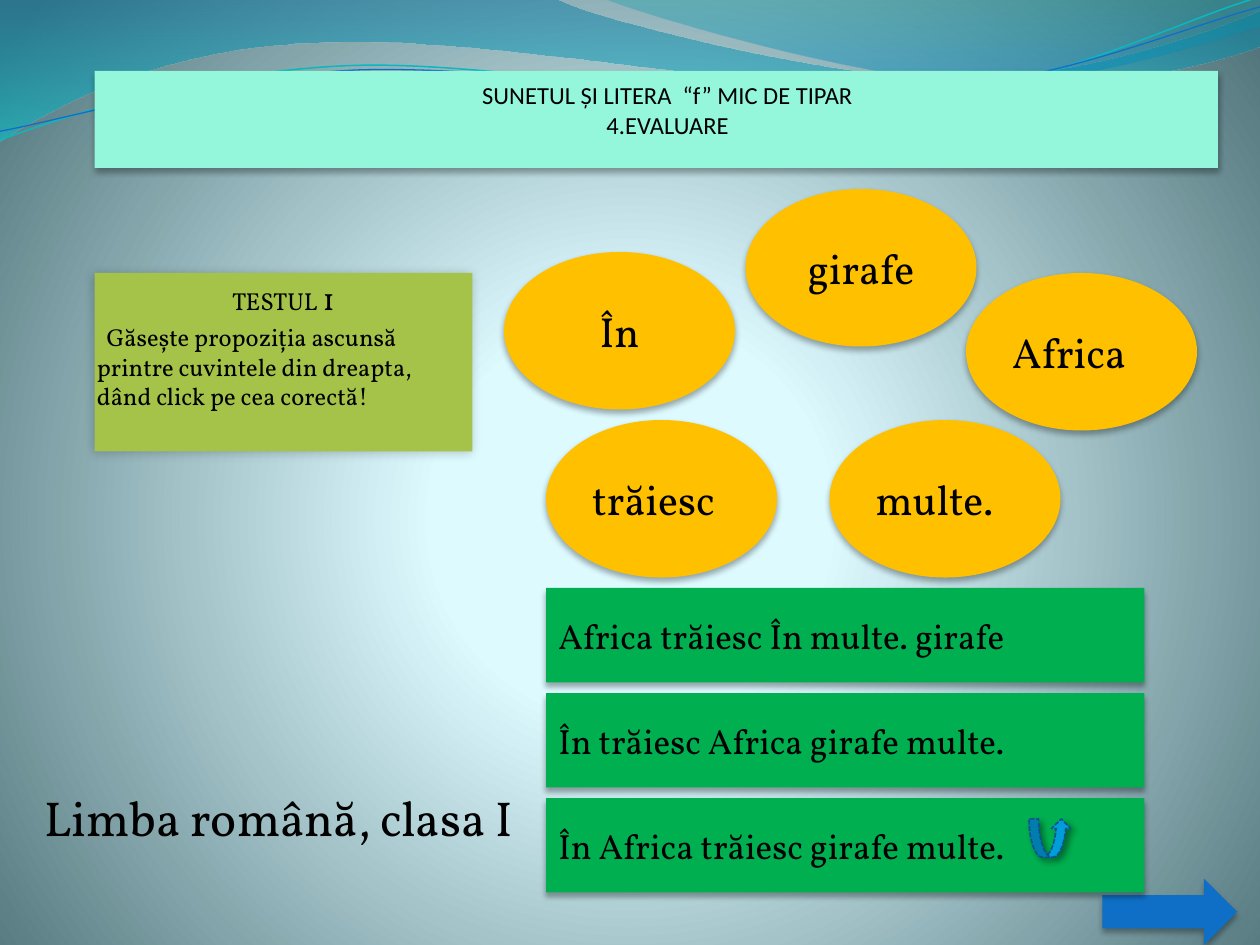
import math
import pptx
import pptx.util
import pptx.dml.color
import pptx.enum.dml
import pptx.enum.lang
import pptx.enum.shapes
import pptx.enum.text
import pptx.oxml
import pptx.oxml.ns

Pt = pptx.util.Pt
RGB = pptx.dml.color.RGBColor.from_string
Kind = pptx.enum.shapes.MSO_SHAPE
Align = pptx.enum.text.PP_ALIGN
Anchor = pptx.enum.text.MSO_ANCHOR
qn = pptx.oxml.ns.qn
ns = pptx.oxml.ns.nsdecls("a")
hues = {
    "ink": "000000", "mint": "94F7DC", "olive": "A5C249", "gold": "FFC000",
    "green": "00B050", "blue": "0F6FC6", "sky": "009DD9", "navy": "0B5292",
    "cyan": "0AB8BF", "glow": "DEFBFF", "mist": "DDFAFF", "slate": "52767C",
    "deep": "0074A1", "aqua": "00C6CF", "teal": "00A1A9", "sea": "008BBF",
}


def form(shape, box, hue, cast=(32, 3.5, 2.2, 90)):
    shape.left, shape.top, shape.width, shape.height = [Pt(v) for v in box]
    shape.fill.solid()
    shape.fill.fore_color.rgb = RGB(hues[hue])
    shape.line.fill.background()
    shape.shadow.inherit = False
    alpha, blur, dist, angle = cast
    shape._element.spPr.find(qn("a:effectLst")).append(pptx.oxml.parse_xml(
        f'<a:outerShdw {ns} blurRad="{Pt(blur)}" dist="{Pt(dist)}" dir="{angle * 60000}" '
        f'algn="ctr" rotWithShape="0"><a:srgbClr val="{hues["ink"]}">'
        f'<a:alpha val="{alpha * 1000}"/></a:srgbClr></a:outerShdw>'))
    return shape


def write(para, text, size, face="Vollkorn"):
    run = para.add_run()
    run.text = text
    run.font.size = Pt(size)
    run.font.name = face
    run.font.bold = False
    run.font.color.rgb = RGB(hues["ink"])
    run.font.language_id = pptx.enum.lang.MSO_LANGUAGE_ID.ROMANIAN


deck = pptx.Presentation()
deck.slide_width, deck.slide_height = Pt(720), Pt(540)
slide = deck.slides.add_slide(deck.slide_layouts[3])
shapes = slide.shapes
title, test, course = slide.placeholders

slide.background.fill.solid()
fades = [(slide._element.find(".//" + qn("p:bgPr")),
          [(0, "glow", 100), (25, "mist", 100), (100, "slate", 100)],
          '<a:path path="circle"><a:fillToRect l="10000" t="110000" r="10000" b="100000"/></a:path>')]
down = '<a:lin ang="5400000" scaled="1"/>'

waves = [
    ([(0, 0), (317, -1), (343, 12, 478, 45, 546, 45), (614, 45, 690, 19, 720, 6), (721, 26),
      (708, 32, 626, 55, 537, 54), (448, 54, 275, 20, 185, 24), (93, 26, 33, 60, -1, 81)],
     [(0, "deep", 45), (100, "aqua", 55)], None, None),
    ([(345, -1), (366, 8, 491, 45, 554, 47), (616, 50, 692, 23, 720, 15), (720, 0)],
     [(0, "teal", 30), (80, "sea", 45)], None, None),
    ([(0, 80), (35, 67, 114, 41, 199, 37.5), (284, 34, 427, 64, 513, 57.5),
      (600, 51, 675, 11, 719, -1.5)], "cyan", 0.85, (359.5, 41.4)),
    ([(0, 75), (34, 69, 118, 44, 204, 40), (290, 37, 430, 60.5, 516, 54),
      (602, 48, 678, 15, 720, 4)], "blue", 0.75, (360, 42.5)),
]
back = deck.slide_master.shapes._spTree
strands = shapes.add_group_shape()
tilt = 2.7
cos, sin = math.cos(math.radians(tilt)), math.sin(math.radians(tilt))
for rank, (route, paint, weight, hub) in enumerate(waves):
    spots = [step[i:i + 2] for step in route for i in range(0, len(step), 2)]
    if hub:
        spots = [(hub[0] + (x - hub[0]) * cos - (y - hub[1]) * sin,
                  hub[1] + (x - hub[0]) * sin + (y - hub[1]) * cos) for x, y in spots]
    dots = [(Pt(x), Pt(y)) for x, y in spots]
    pen = (strands.shapes if hub else shapes).build_freeform(*dots[0])
    pen.add_line_segments(dots[1:], close=not hub)
    wave = pen.convert_to_shape()
    legs = wave._element.findall(".//" + qn("a:lnTo"))
    for step in route[1:]:
        if len(step) == 6:
            curve = pptx.oxml.parse_xml(f"<a:cubicBezTo {ns}/>")
            legs[0].addprevious(curve)
            for leg in legs[:3]:
                curve.append(leg[0])
                leg.getparent().remove(leg)
        legs = legs[len(step) // 2:]
    wave.shadow.inherit = False
    if hub:
        wave.rotation = 360 - tilt
        wave.fill.background()
        wave.line.color.rgb = RGB(hues[paint])
        wave.line.width = Pt(weight)
    else:
        wave.fill.solid()
        wave.line.fill.background()
        fades.append((wave._element.spPr, paint, down))
        back.insert(2 + rank, wave._element)
back.insert(4, strands._element)

for host, stops, tail in fades:
    marks = "".join(f'<a:gs pos="{at * 1000}"><a:srgbClr val="{hues[hue]}">'
                    f'<a:alpha val="{alpha * 1000}"/></a:srgbClr></a:gs>'
                    for at, hue, alpha in stops)
    host.replace(host.find(qn("a:solidFill")), pptx.oxml.parse_xml(
        f'<a:gradFill {ns} rotWithShape="1"><a:gsLst>{marks}</a:gsLst>{tail}</a:gradFill>'))

form(title, (54, 40.5, 642, 55.5), "mint")
form(test, (54, 156, 216, 102), "olive", (20, 6, 1, 135))
course.left, course.top, course.width, course.height = Pt(18), Pt(450), Pt(402), Pt(60)
for holder, sides in [(title, (13, 3.6, 0, 16.5)), (test, (1.4, 3.6, 1.4, 3.6)),
                      (course, (7.2, 0, 7.2, 3.6))]:
    frame = holder.text_frame
    frame.word_wrap = True
    frame.auto_size = pptx.enum.text.MSO_AUTO_SIZE.NONE
    frame.vertical_anchor = Anchor.BOTTOM if holder is title else Anchor.TOP
    (frame.margin_left, frame.margin_top,
     frame.margin_right, frame.margin_bottom) = [Pt(v) for v in sides]

head = title.text_frame.paragraphs[0]
head.alignment = Align.CENTER
write(head, "SUNETUL ŞI LITERA  “f” MIC DE TIPAR", 14, "Calibri")
head.add_line_break()
write(head, "4.EVALUARE", 14, "Calibri")

label = test.text_frame.paragraphs[0]
label.alignment = Align.CENTER
write(label, "TESTUL ", 14)
write(label, "1", 18)
task = test.text_frame.add_paragraph()
write(task, "Găseşte propoziţia ascunsă printre cuvintele din dreapta, dând click pe cea corectă!", 14)
name = course.text_frame.paragraphs[0]
write(name, "Limba română, clasa I", 28)
for para, margin, indent in [(label, 0, 0), (task, 0, 5.5), (name, 21.6, -21.6)]:
    para.space_before = Pt(3)
    props = para._p.get_or_add_pPr()
    props.set("marL", str(Pt(margin)))
    props.set("indent", str(Pt(indent)))
    props.append(pptx.oxml.parse_xml(f"<a:buNone {ns}/>"))

form(shapes.add_shape(Kind.RIGHT_ARROW, 0, 0, 0, 0), (630, 502, 77, 38), "blue")

cards = [(Kind.OVAL, (x, y, 132, 90), "gold", word, 24, side) for x, y, word, side in [
    (288, 144, "În", Align.CENTER), (426, 108, "girafe", Align.CENTER),
    (312, 240, "trăiesc", Align.LEFT), (552, 156, "Africa", Align.LEFT),
    (474, 240, "multe.", Align.LEFT)]]
cards += [(Kind.RECTANGLE, (312, 336 + 60 * row, 342, 54), "green", line, 20, Align.LEFT)
          for row, line in enumerate(["Africa trăiesc În multe. girafe",
                                      "În trăiesc Africa girafe multe.",
                                      "În Africa trăiesc girafe multe."])]
for kind, box, hue, text, size, side in cards:
    card = form(shapes.add_shape(kind, 0, 0, 0, 0), box, hue)
    card.text_frame.word_wrap = True
    card.text_frame.vertical_anchor = Anchor.MIDDLE
    para = card.text_frame.paragraphs[0]
    para.alignment = side
    write(para, text, size)

hook = form(shapes.add_shape(Kind.CURVED_UP_ARROW, 0, 0, 0, 0),
            (588, 468, 24, 22), "sky", (40, 4, 3, 45))
hook.line.color.rgb = RGB(hues["navy"])
hook.line.width = Pt(0.9)
hook.line.dash_style = pptx.enum.dml.MSO_LINE.SQUARE_DOT

deck.save("out.pptx")
